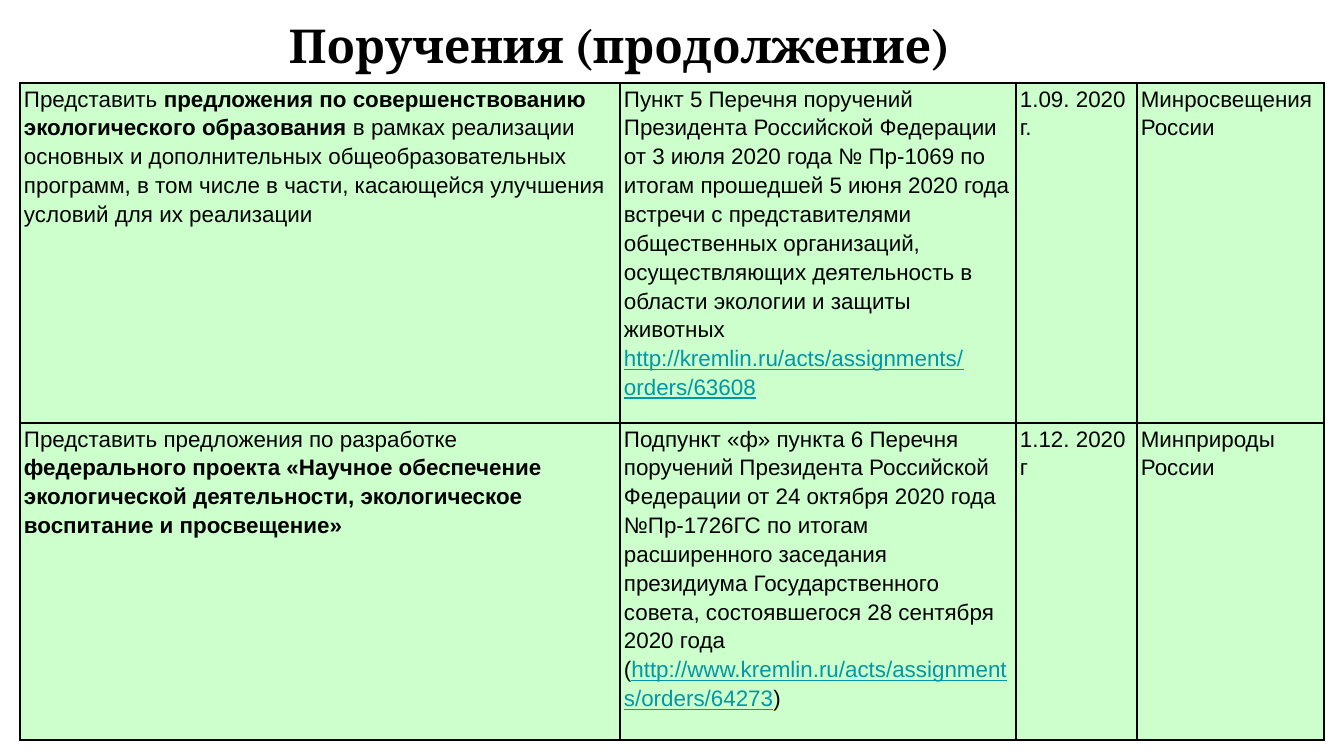
from dataclasses import dataclass

from lxml.etree import SubElement
from pptx import Presentation
from pptx.dml.color import RGBColor
from pptx.enum.text import MSO_ANCHOR
from pptx.oxml.ns import qn
from pptx.util import Pt

EMU_PER_PX = 914400 / 134.4


@dataclass(frozen=True)
class Theme:
    ink: str = "000000"
    link: str = "0097A7"
    cell: str = "CCFFCC"
    title_font: str = "Cambria"
    body_font: str = "Arial"
    title_size: int = 25
    body_size: int = 12
    line_spacing: float = 1.15
    border: int = 1


THEME = Theme()
SLIDE_SIZE = (1344, 756)
TITLE = "Поручения (продолжение)"
TITLE_BOX = (276, 4, 1253, 85)
TITLE_INSET = 13
TABLE_ORIGIN = (20, 83)
COLUMN_WIDTHS = (600, 396, 121, 187)
ROW_HEIGHTS = (329, 317)
CELL_INSET = 4

ASSIGNMENTS = [
    [
        [[
            ("Представить ", "plain"),
            ("предложения по совершенствованию экологического образования ", "bold"),
            ("в рамках реализации основных и дополнительных общеобразовательных "
             "программ, в том числе в части, касающейся улучшения условий для их "
             "реализации", "plain"),
        ]],
        [
            [("Пункт 5 Перечня поручений Президента Российской Федерации от 3 июля "
              "2020 года № Пр-1069 по итогам прошедшей 5 июня 2020 года встречи с "
              "представителями общественных организаций, осуществляющих "
              "деятельность в области экологии и защиты животных", "plain")],
            [("http://kremlin.ru/acts/assignments/orders/63608", "link")],
        ],
        [[("1.09. 2020 г.", "plain")]],
        [[("Минросвещения России", "plain")]],
    ],
    [
        [[
            ("Представить предложения по разработке ", "plain"),
            ("федерального проекта «Научное обеспечение экологической деятельности, "
             "экологическое воспитание и просвещение»", "bold"),
        ]],
        [[
            ("Подпункт «ф» пункта 6 Перечня поручений Президента Российской "
             "Федерации от 24 октября 2020 года №Пр-1726ГС по итогам расширенного "
             "заседания президиума Государственного совета, состоявшегося "
             "28 сентября 2020 года (", "plain"),
            ("http://www.kremlin.ru/acts/assignments/orders/64273", "link"),
            (")", "plain"),
        ]],
        [[("1.12. 2020 г", "plain")]],
        [[("Минприроды России", "plain")]],
    ],
]


def px(length):
    return round(length * EMU_PER_PX)


def add_run(paragraph, text, font, size, style):
    run = paragraph.add_run()
    run.text = text
    run.font.name = font
    run.font.size = Pt(size)
    run.font.bold = style == "bold"
    run.font.underline = style == "link"
    color = THEME.link if style == "link" else THEME.ink
    run.font.color.rgb = RGBColor.from_string(color)


def add_borders(cell):
    properties = cell._tc.get_or_add_tcPr()
    for side in ("a:lnL", "a:lnR", "a:lnT", "a:lnB"):
        border = SubElement(properties, qn(side), w=str(Pt(THEME.border)))
        fill = SubElement(border, qn("a:solidFill"))
        SubElement(fill, qn("a:srgbClr"), val=THEME.ink)


def fill_cell(cell, paragraphs):
    add_borders(cell)
    cell.fill.solid()
    cell.fill.fore_color.rgb = RGBColor.from_string(THEME.cell)
    cell.margin_left = cell.margin_right = px(CELL_INSET)
    cell.margin_top = cell.margin_bottom = 0
    cell.vertical_anchor = MSO_ANCHOR.TOP
    frame = cell.text_frame
    for index, runs in enumerate(paragraphs):
        paragraph = frame.add_paragraph() if index else frame.paragraphs[0]
        paragraph.line_spacing = THEME.line_spacing
        for text, style in runs:
            add_run(paragraph, text, THEME.body_font, THEME.body_size, style)


def add_title(slide):
    frame = slide.shapes.add_textbox(*map(px, TITLE_BOX)).text_frame
    frame.word_wrap = True
    frame.vertical_anchor = MSO_ANCHOR.TOP
    frame.margin_left = frame.margin_right = px(TITLE_INSET)
    frame.margin_top = frame.margin_bottom = px(TITLE_INSET)
    add_run(frame.paragraphs[0], TITLE, THEME.title_font, THEME.title_size, "bold")


def add_assignments(slide):
    size = (sum(COLUMN_WIDTHS), sum(ROW_HEIGHTS))
    table = slide.shapes.add_table(
        len(ROW_HEIGHTS), len(COLUMN_WIDTHS), *map(px, TABLE_ORIGIN + size)
    ).table
    table.first_row = table.horz_banding = False
    for column, width in zip(table.columns, COLUMN_WIDTHS):
        column.width = px(width)
    for row, height, assignment in zip(table.rows, ROW_HEIGHTS, ASSIGNMENTS):
        row.height = px(height)
        for cell, paragraphs in zip(row.cells, assignment):
            fill_cell(cell, paragraphs)


def main():
    presentation = Presentation()
    presentation.slide_width, presentation.slide_height = map(px, SLIDE_SIZE)
    slide = presentation.slides.add_slide(presentation.slide_layouts[6])
    add_title(slide)
    add_assignments(slide)
    presentation.save("out.pptx")


if __name__ == "__main__":
    main()
